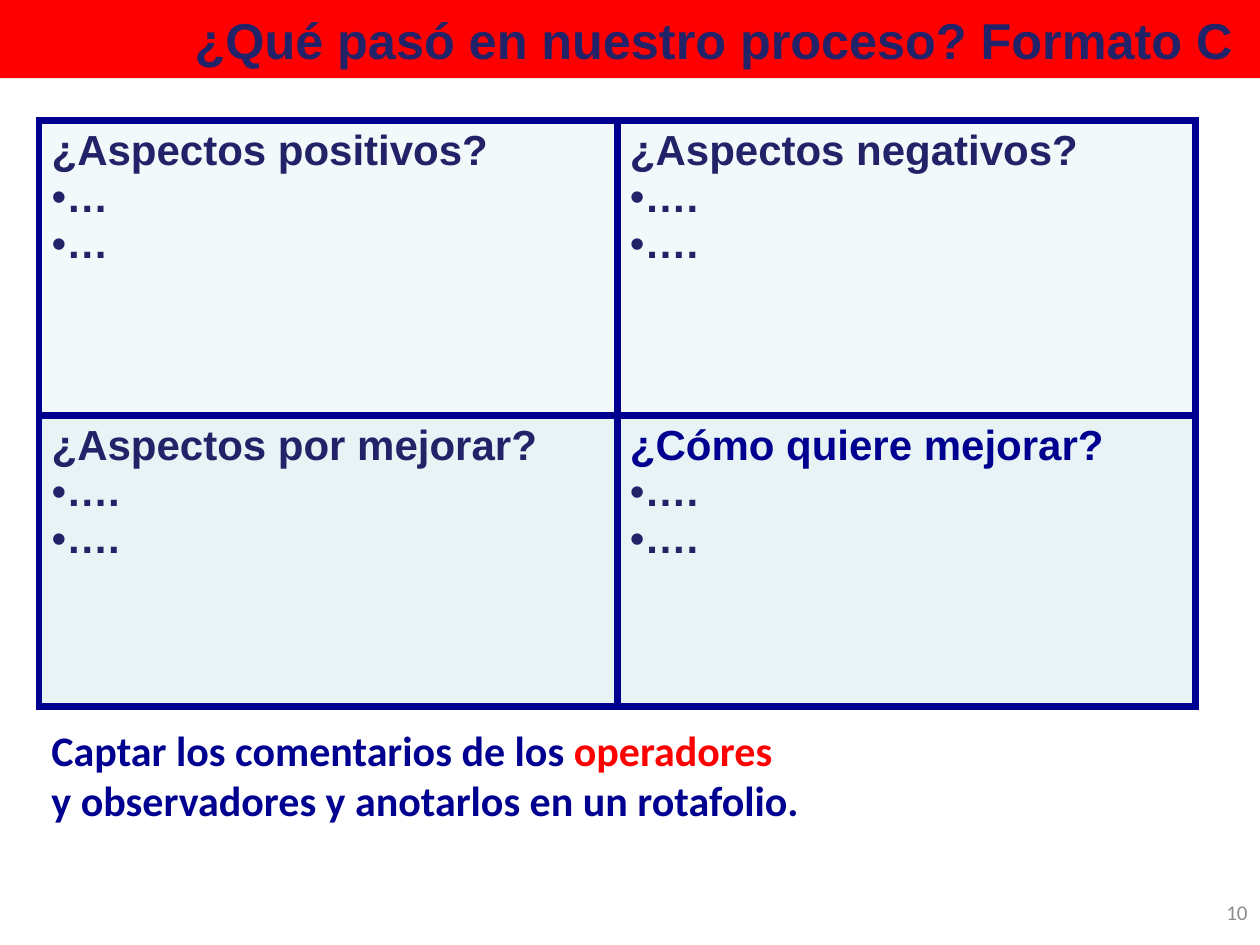
from lxml.etree import SubElement
from pptx import Presentation
from pptx.dml.color import RGBColor
from pptx.enum.shapes import MSO_SHAPE
from pptx.enum.text import MSO_ANCHOR, PP_ALIGN
from pptx.oxml.ns import qn
from pptx.util import Inches, Pt

NAVY, BLUE, RED, GRAY = "222268", "000090", "FF0000", "8C8C8C"
QUADRANTS = [
    [("¿Aspectos positivos?", "…", NAVY), ("¿Aspectos negativos?", "….", NAVY)],
    [("¿Aspectos por mejorar?", "….", NAVY), ("¿Cómo quiere mejorar?", "….", BLUE)],
]
ROW_FILLS = ["F3F9FA", "E7F3F4"]
ROW_HEIGHTS = [2.34, 2.31]


def rgb(color):
    return RGBColor.from_string(color)


def write(paragraph, text, size=24, font="Arial", color=NAVY, bold=True, align=PP_ALIGN.LEFT):
    paragraph.alignment = align
    run = paragraph.add_run()
    run.text = text
    run.font.size = Pt(size)
    run.font.name = font
    run.font.bold = bold
    run.font.color.rgb = rgb(color)


def add_bullet(paragraph):
    properties = paragraph._p.get_or_add_pPr()
    SubElement(properties, qn("a:buFont"), typeface="Arial")
    SubElement(properties, qn("a:buChar"), char="•")


def add_borders(cell, color, width):
    properties = cell._tc.get_or_add_tcPr()
    for position, side in enumerate(("a:lnL", "a:lnR", "a:lnT", "a:lnB")):
        line = SubElement(properties, qn(side), w=str(Pt(width)))
        fill = SubElement(line, qn("a:solidFill"))
        SubElement(fill, qn("a:srgbClr"), val=color)
        properties.insert(position, line)


def add_title(slide, title):
    banner = slide.shapes.add_shape(MSO_SHAPE.RECTANGLE, 0, 0, Inches(10), Inches(0.62))
    banner.shadow.inherit = False
    banner.fill.solid()
    banner.fill.fore_color.rgb = rgb(RED)
    banner.line.fill.background()
    banner.text_frame.vertical_anchor = MSO_ANCHOR.MIDDLE
    write(banner.text_frame.paragraphs[0], title, size=28.8, align=PP_ALIGN.RIGHT)


def add_text_box(slide, left, top, width, height, anchor=MSO_ANCHOR.TOP):
    """Add an empty wrapping text box and return its first paragraph."""
    frame = slide.shapes.add_textbox(
        Inches(left), Inches(top), Inches(width), Inches(height)).text_frame
    frame.word_wrap = True
    frame.vertical_anchor = anchor
    return frame.paragraphs[0]


def fill_quadrant(cell, question, answer, question_color, fill):
    cell.fill.solid()
    cell.fill.fore_color.rgb = rgb(fill)
    add_borders(cell, BLUE, 4.5)
    write(cell.text_frame.paragraphs[0], question, color=question_color)
    for _ in range(2):
        paragraph = cell.text_frame.add_paragraph()
        write(paragraph, answer)
        add_bullet(paragraph)


def add_quadrants(slide):
    table = slide.shapes.add_table(
        2, 2, Inches(0.31), Inches(0.96), Inches(9.18), Inches(sum(ROW_HEIGHTS))).table
    table.first_row = table.horz_banding = False
    for row, (height, fill) in enumerate(zip(ROW_HEIGHTS, ROW_FILLS)):
        table.rows[row].height = Inches(height)
        for column, (question, answer, color) in enumerate(QUADRANTS[row]):
            fill_quadrant(table.cell(row, column), question, answer, color, fill)


def add_instruction(slide):
    instruction = add_text_box(slide, 0.31, 5.7, 9.15, 0.91)
    write(instruction, "Captar los comentarios de los ", font="Calibri", color=BLUE)
    write(instruction, "operadores", font="Calibri", color=RED)
    instruction.add_line_break()
    write(instruction, "y observadores y anotarlos en un rotafolio.", font="Calibri", color=BLUE)


def main():
    presentation = Presentation()
    presentation.slide_width, presentation.slide_height = Inches(10), Inches(7.5)
    slide = presentation.slides.add_slide(presentation.slide_layouts[6])
    add_title(slide, "¿Qué pasó en nuestro proceso? Formato C ")
    add_quadrants(slide)
    page_number = add_text_box(slide, 7.67, 6.98, 2.33, 0.52, MSO_ANCHOR.MIDDLE)
    write(page_number, "10", size=12, font="Calibri", color=GRAY, bold=False,
          align=PP_ALIGN.RIGHT)
    add_instruction(slide)
    presentation.save("out.pptx")


if __name__ == "__main__":
    main()
